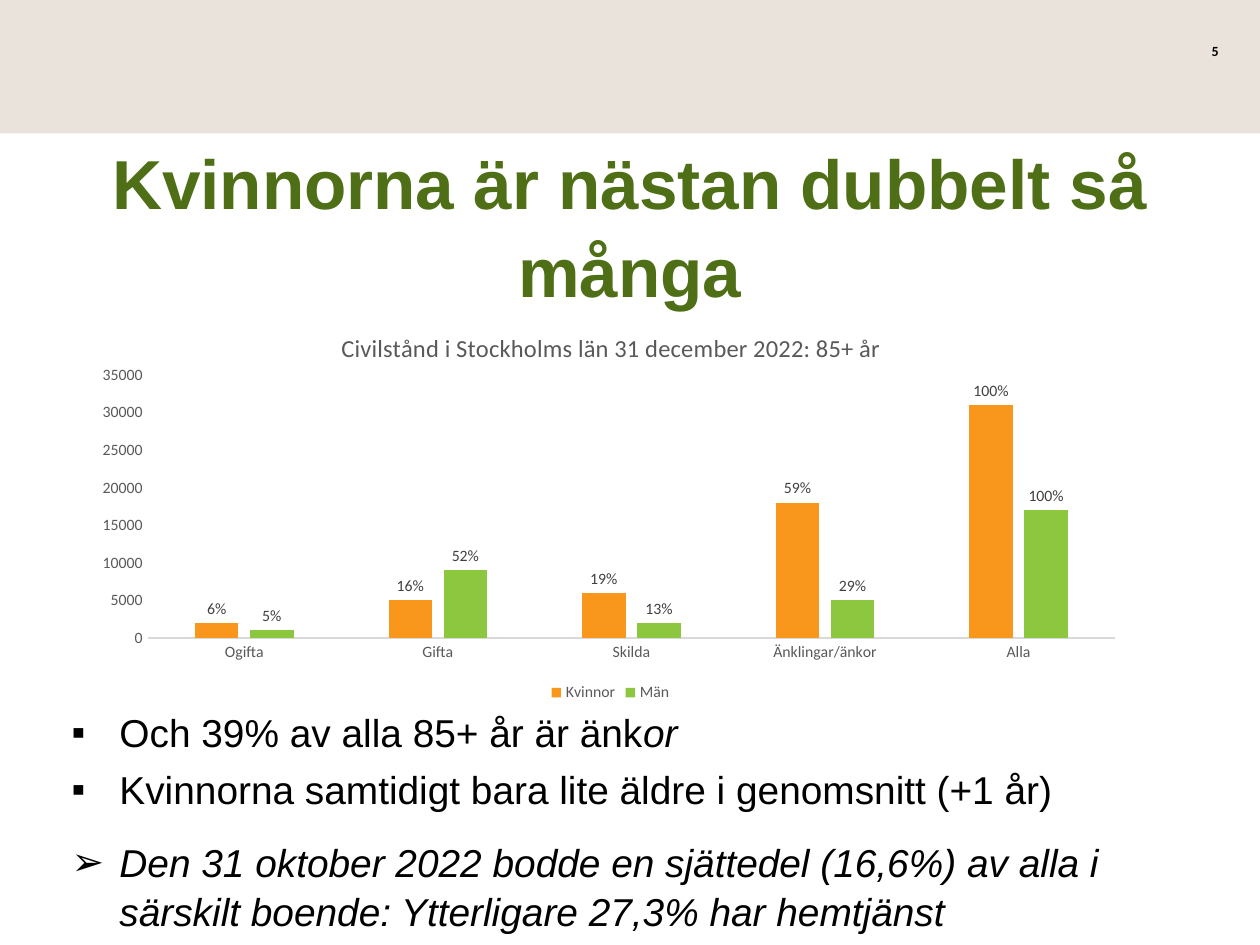
from lxml import etree
from pptx import Presentation
from pptx.chart.data import CategoryChartData
from pptx.dml.color import RGBColor
from pptx.enum.chart import XL_CHART_TYPE as ChartType
from pptx.enum.chart import XL_LABEL_POSITION as LabelPosition
from pptx.enum.chart import XL_LEGEND_POSITION as LegendPosition
from pptx.enum.chart import XL_TICK_MARK as TickMark
from pptx.enum.shapes import MSO_SHAPE as Shape
from pptx.enum.text import MSO_ANCHOR as Anchor
from pptx.enum.text import PP_ALIGN as Align
from pptx.oxml import parse_xml
from pptx.oxml.ns import nsdecls, qn
from pptx.util import Inches, Pt

GREY = "595959"


def style_font(font, size, color="000000", name="Calibri", bold=False, italic=False):
    font.size, font.name, font.bold, font.italic = Pt(size), name, bold, italic
    font.color.rgb = RGBColor.from_string(color)


def write(para, text, **font_format):
    span = para.add_run()
    span.text = text
    style_font(span.font, **font_format)


deck = Presentation()
deck.slide_width, deck.slide_height = Inches(10), Inches(7.5)
page = deck.slides.add_slide(deck.slide_layouts[6])

band = page.shapes.add_shape(Shape.RECTANGLE, 0, 0, Inches(10), Inches(1.06))
band.shadow.inherit = False
band.fill.solid()
band.fill.fore_color.rgb = RGBColor.from_string("E9E3DC")
band.line.fill.background()

number_box = page.shapes.add_textbox(Inches(9.02), Inches(0.29), Inches(0.75), Inches(0.25))
number_box.text_frame.word_wrap = True
para = number_box.text_frame.paragraphs[0]
para.alignment = Align.RIGHT
write(para, "5", size=8, bold=True)

title_box = page.shapes.add_textbox(0, Inches(1.15), Inches(10), Inches(1.25))
title_box.text_frame.word_wrap = True
title_box.text_frame.vertical_anchor = Anchor.MIDDLE
para = title_box.text_frame.paragraphs[0]
para.alignment = Align.CENTER
para.line_spacing = 1.05
write(para, "Kvinnorna är nästan dubbelt så många", size=39.6, name="Arial",
      color="4F6F17", bold=True)

# Bullet sign, space before in points, and (text, italic) spans
bullets = [
    ("▪", 0, [("Och 39% av alla 85+ år är änk", False), ("or", True)]),
    ("▪", 4.4, [("Kvinnorna samtidigt bara lite äldre i genomsnitt (+1 år)", False)]),
    ("➢", 14, [("Den 31 oktober 2022 bodde en sjättedel (16,6%) av alla i särskilt "
                "boende: Ytterligare 27,3% har hemtjänst", True)]),
]
body_box = page.shapes.add_textbox(Inches(0.47), Inches(5.56), Inches(9.07), Inches(1.73))
body_box.text_frame.word_wrap = True
for index, (sign, space_before, spans) in enumerate(bullets):
    frame = body_box.text_frame
    para = frame.add_paragraph() if index else frame.paragraphs[0]
    para.line_spacing = 1.05
    para.space_before = Pt(space_before)
    properties = para._p.get_or_add_pPr()
    properties.set("marL", str(Inches(0.38)))
    properties.set("indent", str(-Inches(0.38)))
    etree.SubElement(properties, qn("a:buFont")).set("typeface", "Arial")
    etree.SubElement(properties, qn("a:buChar")).set("char", sign)
    for text, italic in spans:
        write(para, text, size=22.2, name="Arial", italic=italic)

series_data = [
    ("Kvinnor", "F8971C", [2000, 5000, 6000, 18000, 31000], ["6%", "16%", "19%", "59%", "100%"]),
    ("Män", "8DC63F", [1000, 9000, 2000, 5000, 17000], ["5%", "52%", "13%", "29%", "100%"]),
]
data = CategoryChartData()
data.categories = ["Ogifta", "Gifta", "Skilda", "Änklingar/änkor", "Alla"]
for name, _, values, _ in series_data:
    data.add_series(name, values)
chart = page.shapes.add_chart(ChartType.COLUMN_CLUSTERED, Inches(0.67), Inches(2.4),
                              Inches(8.35), Inches(3.21), data).chart
style_font(chart.font, 10)

chart.has_title = True
write(chart.chart_title.text_frame.paragraphs[0],
      "Civilstånd i Stockholms län 31 december 2022: 85+ år", size=14, color=GREY)
chart.has_legend = True
chart.legend.position = LegendPosition.BOTTOM
chart.legend.include_in_layout = False
style_font(chart.legend.font, 9, GREY)

for axis in (chart.category_axis, chart.value_axis):
    axis.has_major_gridlines = False
    axis.major_tick_mark = axis.minor_tick_mark = TickMark.NONE
    style_font(axis.tick_labels.font, 9, GREY)
chart.category_axis.format.line.color.rgb = RGBColor.from_string("D9D9D9")
chart.category_axis.format.line.width = Pt(0.75)
chart.value_axis.format.line.fill.background()
chart.value_axis.minimum_scale, chart.value_axis.maximum_scale = 0, 35000
chart.value_axis.major_unit = 5000

plot = chart.plots[0]
plot.gap_width, plot.overlap, plot.vary_by_categories = 219, -27, False
for series, (_, color, _, labels) in zip(plot.series, series_data):
    series.format.fill.solid()
    series.format.fill.fore_color.rgb = RGBColor.from_string(color)
    for index, text in enumerate(labels):
        label = series.points[index].data_label
        write(label.text_frame.paragraphs[0], text, size=9, color="404040")
        label.position = LabelPosition.OUTSIDE_END

# Fixed places for the title and the plot, as fractions of the chart
chart_xml = chart._chartSpace.chart
for owner, target, places in (
    (chart_xml.find(qn("c:title")), "", {"x": 0.24, "y": 0.06}),
    (chart_xml.plotArea, '<c:layoutTarget val="inner"/>',
     {"x": 0.06, "y": 0.18, "w": 0.92, "h": 0.65}),
):
    for old_layout in owner.findall(qn("c:layout")):
        owner.remove(old_layout)
    modes = "".join(f'<c:{key}Mode val="edge"/>' for key in "xy")
    sizes = "".join(f'<c:{key} val="{value}"/>' for key, value in places.items())
    layout = parse_xml(f'<c:layout {nsdecls("c")}><c:manualLayout>{target}{modes}{sizes}'
                       "</c:manualLayout></c:layout>")
    owner.insert(0 if target else 1, layout)

deck.save("out.pptx")
